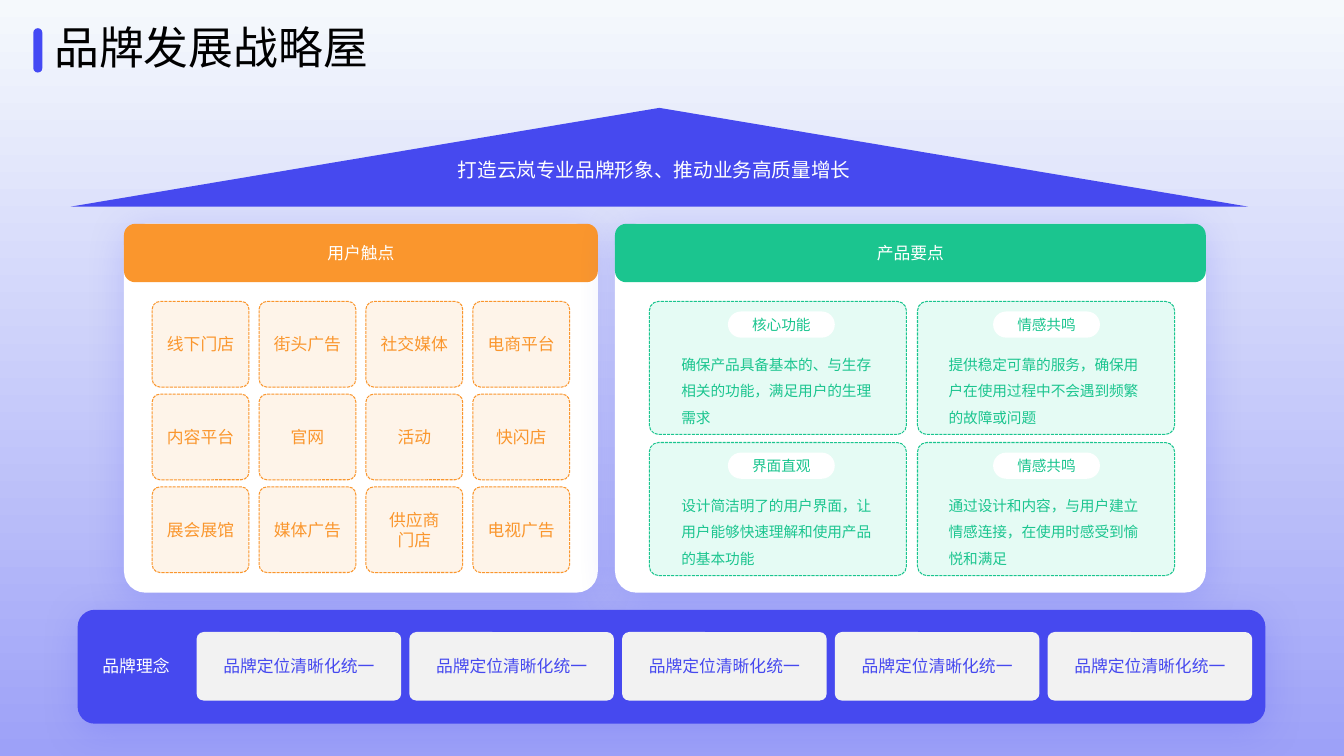
from lxml.etree import SubElement
from pptx import Presentation
from pptx.dml.color import RGBColor
from pptx.enum.dml import MSO_LINE
from pptx.enum.shapes import MSO_SHAPE
from pptx.enum.text import MSO_ANCHOR, PP_ALIGN
from pptx.oxml.ns import qn
from pptx.util import Inches, Pt

FONT = "Noto Sans CJK SC"
WHITE = RGBColor(0xFF, 0xFF, 0xFF)
BLACK = RGBColor(0, 0, 0)
BLUE = RGBColor(0x46, 0x49, 0xEF)
MARK = RGBColor(0x44, 0x49, 0xF4)
GREY = RGBColor(0xF2, 0xF2, 0xF2)
ORANGE = RGBColor(0xFA, 0x96, 0x2D)
PEACH = RGBColor(0xFE, 0xEA, 0xD5)
GREEN = RGBColor(0x1B, 0xC5, 0x8F)
MINT = RGBColor(0xCD, 0xF8, 0xEA)
SKY = RGBColor(0xF5, 0xF9, 0xFC)
LILAC = RGBColor(0x9D, 0xA1, 0xF8)

TOUCH = [
    ["线下门店", "街头广告", "社交媒体", "电商平台"],
    ["内容平台", "官网", "活动", "快闪店"],
    ["展会展馆", "媒体广告", "供应商\n门店", "电视广告"],
]
POINTS = [
    [("核心功能", "确保产品具备基本的、与生存相关的功能，满足用户的生理需求"),
     ("情感共鸣", "提供稳定可靠的服务，确保用户在使用过程中不会遇到频繁的故障或问题")],
    [("界面直观", "设计简洁明了的用户界面，让用户能够快速理解和使用产品的基本功能"),
     ("情感共鸣", "通过设计和内容，与用户建立情感连接，在使用时感受到愉悦和满足")],
]


def write(shape, text, size, color, align=PP_ALIGN.CENTER, space=None):
    """Put styled text in a shape."""
    frame = shape.text_frame
    frame.text = text
    for para in frame.paragraphs:
        para.alignment = align
        para.line_spacing = space
        for run in para.runs:
            run.font.size = Pt(size)
            run.font.color.rgb = color
            run.font.name = FONT
            SubElement(run.font._element, qn("a:ea"), typeface=FONT)


def label(slide, box, text, size, color, align, space=None, wrap=True):
    """Add a text box."""
    area = slide.shapes.add_textbox(*map(Inches, box))
    area.text_frame.word_wrap = wrap
    write(area, text, size, color, align, space)


def block(slide, box, fill, curve, text="", size=12, color=WHITE):
    """Add a borderless rounded block with centred text."""
    shape = slide.shapes.add_shape(MSO_SHAPE.ROUNDED_RECTANGLE, *map(Inches, box))
    shape.adjustments[0] = curve
    shape.shadow.inherit = False
    shape.fill.solid()
    shape.fill.fore_color.rgb = fill
    shape.line.fill.background()
    shape.text_frame.vertical_anchor = MSO_ANCHOR.MIDDLE
    if text:
        write(shape, text, size, color)
    return shape


def glow(shape):
    """Give a shape a soft blue shadow below it."""
    effects = shape._element.spPr.find(qn("a:effectLst"))
    shade = SubElement(effects, qn("a:outerShdw"), blurRad=str(Pt(28)),
                       dist=str(Pt(4)), dir="5400000", algn="t", rotWithShape="0")
    tint = SubElement(shade, qn("a:srgbClr"), val=str(BLUE))
    SubElement(tint, qn("a:alpha"), val="20000")


def tile(slide, box, fill, edge, curve, text=""):
    """Add a half-clear block with a dashed edge."""
    shape = block(slide, box, fill, curve, text, 12, edge)
    tint = shape._element.spPr.find(qn("a:solidFill"))[0]
    SubElement(tint, qn("a:alpha"), val="50000")
    shape.line.color.rgb = edge
    shape.line.width = Pt(0.75)
    shape.line.dash_style = MSO_LINE.SQUARE_DOT


def title(slide, left, top):
    """Draw the slide title with its marker bar."""
    block(slide, (left, top + 0.13, 0.09, 0.44), MARK, 0.5)
    label(slide, (left + 0.11, top, 3.34, 0.64), "品牌发展战略屋", 32, BLACK,
          PP_ALIGN.LEFT, wrap=False)


def roof(slide, left, top, width, height):
    """Draw the roof with the goal on it."""
    shape = slide.shapes.add_shape(MSO_SHAPE.ISOSCELES_TRIANGLE,
                                   *map(Inches, (left, top, width, height)))
    shape.shadow.inherit = False
    shape.fill.solid()
    shape.fill.fore_color.rgb = BLUE
    shape.line.fill.background()
    label(slide, (left + 3.73, top + 0.4, 4.12, 0.35),
          "打造云岚专业品牌形象、推动业务高质量增长", 14, WHITE, PP_ALIGN.CENTER, 1.2)


def panel(slide, box, color, text):
    """Draw a white panel with a coloured header."""
    left, top, width, _ = box
    glow(block(slide, box, WHITE, 0.058))
    block(slide, (left, top, width, 0.58), color, 0.193, text)


def touch(slide, box):
    """Draw the panel of user touch points."""
    panel(slide, box, ORANGE, "用户触点")
    for row, names in enumerate(TOUCH):
        for col, name in enumerate(names):
            spot = (box[0] + 0.28 + 1.06 * col, box[1] + 0.77 + 0.92 * row, 0.96, 0.85)
            tile(slide, spot, PEACH, ORANGE, 0.091, name)


def points(slide, box):
    """Draw the panel of product points."""
    panel(slide, box, GREEN, "产品要点")
    for row, cards in enumerate(POINTS):
        for col, (head, body) in enumerate(cards):
            left, top = box[0] + 0.34 + 2.66 * col, box[1] + 0.77 + 1.4 * row
            tile(slide, (left, top, 2.55, 1.32), MINT, GREEN, 0.07)
            block(slide, (left + 0.78 - 0.03 * col, top + 0.1, 1.06, 0.26),
                  WHITE, 0.5, head, 10.5, GREEN)
            label(slide, (left + 0.22 - 0.01 * col, top + 0.4, 2.18, 0.85), body,
                  10.5, GREEN, PP_ALIGN.LEFT, 1.5)


def base(slide, box):
    """Draw the base with the brand ideas."""
    left, top = box[:2]
    glow(block(slide, box, BLUE, 0.149))
    block(slide, (left + 0.06, top + 0.22, 1.04, 0.68), BLUE, 0.092, "品牌理念")
    for col in range(5):
        block(slide, (left + 1.18 + 2.11 * col, top + 0.22, 2.03, 0.68),
              GREY, 0.104, "品牌定位清晰化统一", 12, BLUE)


def main():
    """Build and save the slide."""
    deck = Presentation()
    deck.slide_width, deck.slide_height = Inches(13.33), Inches(7.5)
    slide = deck.slides.add_slide(deck.slide_layouts[6])
    fill = slide.background.fill
    fill.gradient()
    fill.gradient_angle = 270
    for stop, color in zip(fill.gradient_stops, (SKY, LILAC)):
        stop.color.rgb = color
    base(slide, (0.77, 6.05, 11.78, 1.13))
    touch(slide, (1.23, 2.22, 4.7, 3.66))
    points(slide, (6.1, 2.22, 5.86, 3.66))
    roof(slide, 0.7, 1.07, 11.68, 0.98)
    title(slide, 0.33, 0.15)
    deck.save("out.pptx")


if __name__ == "__main__":
    main()
